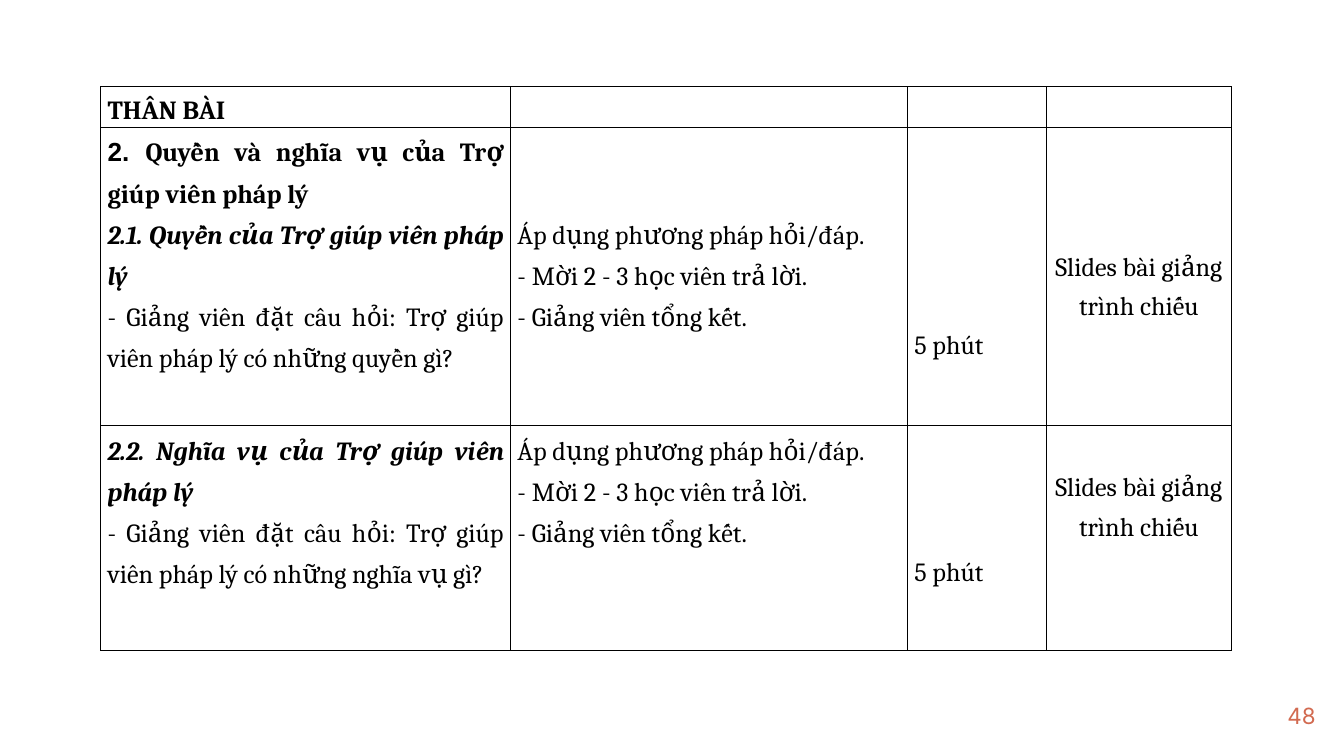
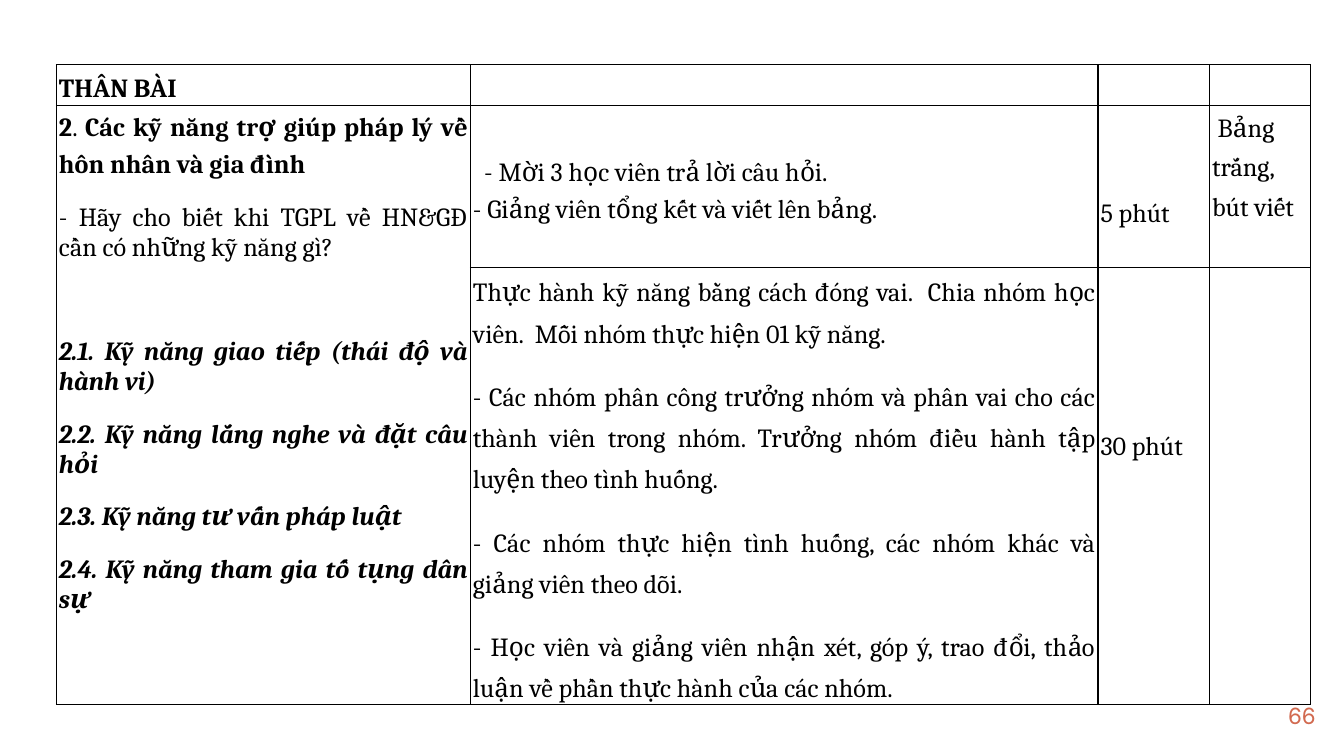
from lxml import etree
from pptx import Presentation
from pptx.dml.color import RGBColor
from pptx.enum import text as tx
from pptx.oxml import ns
from pptx.util import Pt

HUES = {"ink": "000000", "page": "D26A50", "back": "FFFFFF"}
WIDE, HIGH = 720, 405
BODY = 14
LOOSE = 1.3
LINE = 20.9
STEP = 22
LEFT, MID, RIGHT, JUST = (
    tx.PP_ALIGN.LEFT, tx.PP_ALIGN.CENTER, tx.PP_ALIGN.RIGHT, tx.PP_ALIGN.JUSTIFY)
PLAIN = {"name": "Cambria", "size": Pt(BODY), "bold": False, "italic": False}
BOLD = {"bold": True}
SLANT = {"bold": True, "italic": True}
HEAD = "THÂN BÀI"


def apply(obj, fmt):
    for key, val in fmt.items():
        setattr(obj, key, val)


def hue(name):
    return RGBColor.from_string(HUES[name])


def para(*runs, lead=Pt(STEP), after=0, align=JUST, indent=0):
    fmt = {"line_spacing": lead, "space_after": Pt(after),
           "space_before": Pt(0), "alignment": align}
    return runs, fmt, indent


def plain(words, **opts):
    return para((words, {}), **opts)


def slant(words, **opts):
    return para((words, SLANT), **opts)


def write(frame, paras):
    for num, (runs, fmt, indent) in enumerate(paras):
        par = frame.add_paragraph() if num else frame.paragraphs[0]
        apply(par, fmt)
        if indent:
            par._p.get_or_add_pPr().set("indent", str(Pt(indent)))
        for words, style in runs:
            run = par.add_run()
            run.text = words
            apply(run.font, {**PLAIN, **style})
            run.font.color.rgb = hue("ink")


def frame_cell(cell):
    props = cell._tc.get_or_add_tcPr()
    for side in ("lnL", "lnR", "lnT", "lnB"):
        line = etree.SubElement(props, ns.qn("a:" + side), w=str(Pt(0.75)))
        fill = etree.SubElement(line, ns.qn("a:solidFill"))
        etree.SubElement(fill, ns.qn("a:srgbClr"), val=HUES["ink"])
    cell.fill.background()


def grid(slide, box, cols, rows, pad, cells, spans=()):
    table = slide.shapes.add_table(
        len(rows), len(cols), *map(Pt, (*box, sum(cols), sum(rows)))).table
    apply(table, {"first_row": False, "horz_banding": False})
    for col, wide in zip(table.columns, cols):
        col.width = Pt(wide)
    for row, high in zip(table.rows, rows):
        row.height = Pt(high)
    for start, end in spans:
        table.cell(*start).merge(table.cell(*end))
    empty = 0, [para(lead=Pt(BODY))]
    for r in range(len(rows)):
        for c in range(len(cols)):
            cell = table.cell(r, c)
            top, paras = cells.get((r, c), empty)
            apply(cell, {"margin_left": Pt(pad), "margin_right": Pt(pad),
                         "margin_top": Pt(top), "margin_bottom": Pt(0),
                         "vertical_anchor": tx.MSO_ANCHOR.TOP})
            frame_cell(cell)
            write(cell.text_frame, paras)


def footer(slide, num):
    box = slide.shapes.add_textbox(*map(Pt, (661.7, 367.9, 43.2, 31)))
    frame = box.text_frame
    apply(frame, {"margin_left": 0, "margin_right": 0, "margin_top": 0,
                  "margin_bottom": 0, "word_wrap": True,
                  "vertical_anchor": tx.MSO_ANCHOR.MIDDLE})
    par = frame.paragraphs[0]
    par.alignment = RIGHT
    run = par.add_run()
    run.text = str(num)
    apply(run.font, {"name": "Inter", "size": Pt(12)})
    run.font.color.rgb = hue("page")


def page(deck, num):
    slide = deck.slides.add_slide(deck.slide_layouts[6])
    back = slide.background.fill
    back.solid()
    back.fore_color.rgb = hue("back")
    footer(slide, num)
    return slide


def head():
    return 0, [para((HEAD, BOLD), lead=LOOSE)]


def rights(slide, box):
    ask = [plain("Áp dụng phương pháp hỏi/đáp."),
           plain("- Mời 2 - 3 học viên trả lời."),
           plain("- Giảng viên tổng kết.")]
    tools = [plain("Slides bài giảng trình chiếu", lead=LOOSE, align=MID)]
    time = [plain("5 phút", lead=LOOSE)]
    cells = {
        (0, 0): head(),
        (1, 0): (0, [
            para(("2. ", {**BOLD, "name": "Arial"}),
                 ("Quyền và nghĩa vụ của Trợ giúp viên pháp lý", BOLD)),
            slant("2.1. Quyền của Trợ giúp viên pháp lý"),
            plain("- Giảng viên đặt câu hỏi: Trợ giúp viên pháp lý "
                  "có những quyền gì?")]),
        (1, 1): (2 * STEP, ask),
        (1, 2): (5 * LINE, time),
        (1, 3): (3 * LINE, tools),
        (2, 0): (0, [
            slant("2.2. Nghĩa vụ của Trợ giúp viên pháp lý"),
            plain("- Giảng viên đặt câu hỏi: Trợ giúp viên pháp lý "
                  "có những nghĩa vụ gì?")]),
        (2, 1): (0, ask),
        (2, 2): (3 * STEP, time),
        (2, 3): (LINE, tools),
    }
    grid(slide, box, (219.6, 212.6, 74.3, 99.3), (LINE, 159.7, 120.4),
         3.6, cells)


def skills(slide, box):
    gap = 12
    topics = ["2.1. Kỹ năng giao tiếp (thái độ và hành vi)",
              "2.2. Kỹ năng lắng nghe và đặt câu hỏi",
              "2.3. Kỹ năng tư vấn pháp luật",
              "2.4. Kỹ năng tham gia tố tụng dân sự"]
    tasks = ["Thực hành kỹ năng bằng cách đóng vai.  Chia nhóm học viên.  "
             "Mỗi nhóm thực hiện 01 kỹ năng.",
             "- Các nhóm phân công trưởng nhóm và phân vai cho các thành viên "
             "trong nhóm. Trưởng nhóm điều hành tập luyện theo tình huống.",
             "- Các nhóm thực hiện tình huống, các nhóm khác và giảng viên "
             "theo dõi.",
             "- Học viên và giảng viên nhận xét, góp ý, trao đổi, thảo luận "
             "về phần thực hành của các nhóm."]
    cells = {
        (0, 0): head(),
        (1, 0): (0, [
            para(("2", BOLD), (". ", {}),
                 ("Các kỹ năng trợ giúp pháp lý về hôn nhân và gia đình", BOLD),
                 lead=Pt(20), after=gap),
            plain("- Hãy cho biết khi TGPL về HN&GĐ cần có những kỹ năng gì?",
                  lead=1.0, after=2 * gap + 16),
            *[slant(words, lead=1.0, after=gap) for words in topics]]),
        (1, 1): (STEP, [
            plain("- Mời 3 học viên trả lời câu hỏi.", indent=6),
            plain("- Giảng viên tổng kết và viết lên bảng.",
                  lead=Pt(20), after=gap)]),
        (1, 2): (2 * STEP, [plain("5 phút")]),
        (1, 3): (0, [plain("Bảng trắng, bút viết", lead=LOOSE,
                           align=LEFT, indent=3)]),
        (2, 1): (0, [plain(words, after=gap) for words in tasks]),
        (2, 2): (4 * LINE, [plain("30 phút", lead=LOOSE)]),
    }
    grid(slide, box, (221.8, 336.2, 59.8, 54), (LINE, 86.8, 234),
         1.44, cells, [((1, 0), (2, 0))])


def main():
    deck = Presentation()
    apply(deck, {"slide_width": Pt(WIDE), "slide_height": Pt(HIGH)})
    rights(page(deck, 48), (54, 46.4))
    skills(page(deck, 66), (30.2, 34.6))
    deck.save("out.pptx")


if __name__ == "__main__":
    main()
